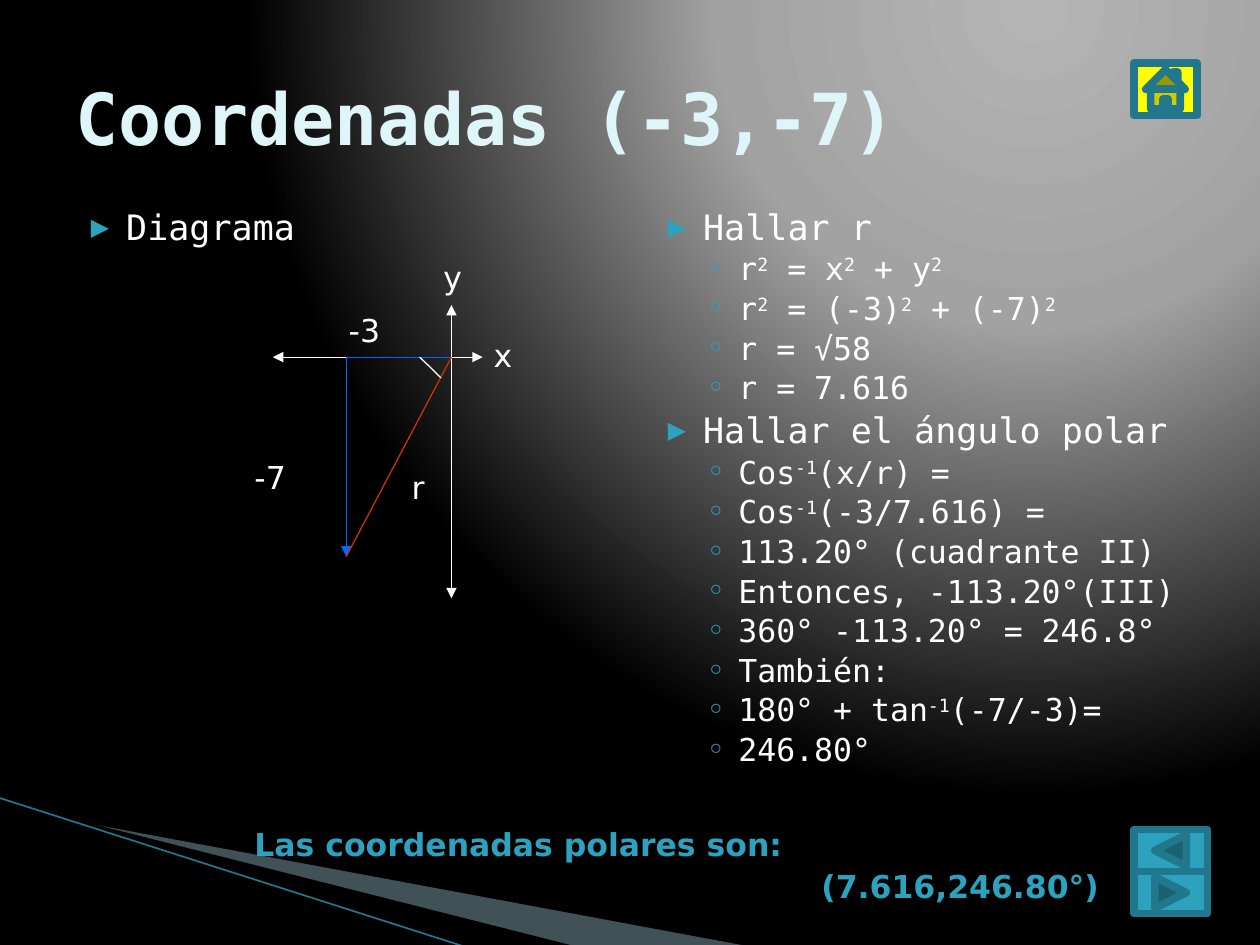
from lxml import etree
from pptx import Presentation
from pptx import oxml, util as u
from pptx.dml import color
from pptx.enum import shapes, text
from pptx.oxml import ns

MONO, SANS = "DejaVu Sans Mono", "DejaVu Sans"
WHITE, TEAL, DARK_TEAL, BLUE, RED = "FFFFFF", "2DA2BF", "21788D", "0066FF", "CC3300"
BULLETS = [  # per level: character, size %, left margin, hanging indent, points
    ("▶", 68, 1.02, 0.71, 20, 4),
    ("◦", 100, 1.73, 0.64, 18, 3.2),
]
HOME = shapes.MSO_SHAPE.ACTION_BUTTON_HOME
BACK = shapes.MSO_SHAPE.ACTION_BUTTON_BACK_OR_PREVIOUS
FORWARD = shapes.MSO_SHAPE.ACTION_BUTTON_FORWARD_OR_NEXT


def rgb(value):
    return color.RGBColor.from_string(value)


def child(parent, tag, **attributes):
    return etree.SubElement(parent, ns.qn(tag), attributes)


class Board:
    """Style and current slide; all lengths are in centimetres."""

    def __init__(self, slide):
        self.slide = slide
        self.shapes = slide.shapes

    def background(self, stops, focus):
        """Radial gradient; focus holds the l, t, r, b insets in percent."""
        bg = oxml.parse_xml(f"<p:bg {ns.nsdecls('p', 'a')}><p:bgPr/></p:bg>")
        gradient = child(bg[0], "a:gradFill", rotWithShape="1")
        stop_list = child(gradient, "a:gsLst")
        for position, value in stops:
            stop = child(stop_list, "a:gs", pos=str(position * 1000))
            child(stop, "a:srgbClr", val=value)
        circle = child(gradient, "a:path", path="circle")
        insets = {side: str(inset * 1000) for side, inset in zip("ltrb", focus)}
        child(circle, "a:fillToRect", **insets)
        child(bg[0], "a:effectLst")
        self.slide._element.cSld.insert(0, bg)

    def outline(self, points, fill=None, alpha=None, line=None):
        corners = [(u.Cm(x), u.Cm(y)) for x, y in points]
        builder = self.shapes.build_freeform(*corners[0])
        builder.add_line_segments(corners[1:], close=fill is not None)
        figure = builder.convert_to_shape()
        figure.shadow.inherit = False
        if fill:
            figure.fill.solid()
            figure.fill.fore_color.rgb = rgb(fill)
        else:
            figure.fill.background()
        if alpha:
            tint = figure._element.spPr.find(".//" + ns.qn("a:srgbClr"))
            child(tint, "a:alpha", val=str(alpha * 1000))
        if line:
            figure.line.color.rgb = rgb(line)
            figure.line.width = u.Pt(0.75)
        else:
            figure.line.fill.background()

    def line(self, start, end, value=WHITE, width=0.75, arrow=False):
        ends = [u.Cm(n) for n in (*start, *end)]
        stroke = self.shapes.add_connector(shapes.MSO_CONNECTOR.STRAIGHT, *ends)
        stroke.line.color.rgb = rgb(value)
        stroke.line.width = u.Pt(width)
        if arrow:
            child(stroke.line._get_or_add_ln(), "a:tailEnd", type="triangle")
        child(stroke._element.spPr, "a:effectLst")

    def font(self, paragraph, name, size, value, bold=False):
        font = paragraph.font
        font.name, font.size, font.bold = name, u.Pt(size), bold
        font.color.rgb = rgb(value)

    def placeholder(self, idx, left, top, width, height):
        """Place a template placeholder in front of what is already drawn."""
        holder = self.slide.placeholders[idx]
        holder.left, holder.top = u.Cm(left), u.Cm(top)
        holder.width, holder.height = u.Cm(width), u.Cm(height)
        holder.text_frame.auto_size = text.MSO_AUTO_SIZE.NONE
        self.shapes._spTree.append(holder._element)
        return holder.text_frame

    def title(self, wording):
        frame = self.placeholder(0, 1.27, 0.76, 22.86, 3.18)
        frame.vertical_anchor = text.MSO_ANCHOR.MIDDLE
        heading = frame.paragraphs[0]
        heading.text = wording
        heading.alignment = text.PP_ALIGN.LEFT
        self.font(heading, MONO, 41, "DEF5FA", bold=True)

    def bullets(self, idx, left, items):
        """Items are (level, wording); ^ opens and closes a superscript."""
        frame = self.placeholder(idx, left, 4.11, 11.23, 12.57)
        for number, (level, wording) in enumerate(items):
            item = frame.add_paragraph() if number else frame.paragraphs[0]
            mark, percent, margin, hanging, size, before = BULLETS[level]
            item.level = level
            props = item._element.get_or_add_pPr()
            props.set("marL", str(u.Cm(margin)))
            props.set("indent", str(-u.Cm(hanging)))
            child(child(props, "a:buClr"), "a:srgbClr", val=TEAL)
            child(props, "a:buSzPct", val=str(percent * 1000))
            child(props, "a:buFont", typeface=SANS)
            child(props, "a:buChar", char=mark)
            item.line_spacing = 0.9
            item.space_before = u.Pt(before if number else 0)
            self.font(item, MONO, size, WHITE)
            for part, piece in enumerate(wording.split("^")):
                run = item.add_run()
                run.text = piece
                if part % 2:
                    run.font._element.set("baseline", "30000")

    def label(self, wording, left, top, width, value=WHITE, bold=False):
        box = self.shapes.add_textbox(u.Cm(left), u.Cm(top), u.Cm(width), u.Cm(1.02))
        box.text_frame.word_wrap = True
        caption = box.text_frame.paragraphs[0]
        caption.text = wording
        self.font(caption, SANS, 18, value, bold)

    def button(self, kind, left, top, width, height, fill=TEAL):
        key = self.shapes.add_shape(kind, *map(u.Cm, (left, top, width, height)))
        key.shadow.inherit = False
        key.fill.solid()
        key.fill.fore_color.rgb = rgb(fill)
        key.line.color.rgb = rgb(DARK_TEAL)
        key.line.width = u.Pt(4.33)


def main():
    deck = Presentation()
    deck.slide_width, deck.slide_height = u.Cm(25.4), u.Cm(19.05)
    board = Board(deck.slides.add_slide(deck.slide_layouts[3]))

    board.background([(0, "B4B4B4"), (40, "A2A2A2"), (100, "000000")], (65, 0, 0, 98))
    board.outline([(1.4, 16.53), (15.11, 19.08), (11.58, 19.08), (1.4, 16.51)],
                  fill="A0CBDC", alpha=40)
    board.outline([(1.35, 16.48), (11.61, 19.08), (9.45, 19.1), (1.37, 16.51)],
                  fill="000000")
    board.line((-0.03, 16.08), (9.42, 19.1), DARK_TEAL, 0.95)

    board.bullets(1, 1.27, [(0, "Diagrama")])
    board.bullets(2, 12.9, [
        (0, "Hallar r"),
        (1, "r^2^ = x^2^ + y^2^"),
        (1, "r^2^ = (-3)^2^ + (-7)^2^"),
        (1, "r = √58"),
        (1, "r = 7.616"),
        (0, "Hallar el ángulo polar"),
        (1, "Cos^-1^(x/r) ="),
        (1, "Cos^-1^(-3/7.616) ="),
        (1, "113.20° (cuadrante II)"),
        (1, "Entonces, -113.20°(III)"),
        (1, "360° -113.20° = 246.8°"),
        (1, "También:"),
        (1, "180° + tan^-1^(-7/-3)="),
        (1, "246.80°"),
    ])
    board.title("Coordenadas (-3,-7)")

    origin, foot, point = (9.1, 7.2), (6.98, 7.2), (6.98, 11.22)
    for start, end in [
        ((9.1, 6.35), (9.1, 12.06)),
        ((9.1, 8.05), (9.1, 6.15)),
        (origin, (5.5, 7.2)),
        ((8.89, 7.2), (9.73, 7.2)),
    ]:
        board.line(start, end, arrow=True)
    board.line(foot, point, BLUE, arrow=True)
    board.line(origin, foot, BLUE)
    board.line(origin, point, RED)

    for wording, left, top, width in [
        ("-3", 6.78, 6.15, 1.47),
        ("-7", 4.88, 9.1, 1.7),
        ("r", 8.05, 9.32, 0.64),
        ("y", 8.69, 5.08, 1.7),
        ("x", 9.7, 6.65, 0.89),
    ]:
        board.label(wording, left, top, width)
    board.label("(7.616,246.80°)", 16.31, 17.35, 6.6, TEAL, bold=True)
    board.label("Las coordenadas polares son:", 4.88, 16.51, 12.07, TEAL, bold=True)
    board.outline([(8.46, 7.2), (8.68, 7.41), (8.89, 7.62)], line=WHITE)

    board.button(FORWARD, 22.86, 17.57, 1.48, 0.85)
    board.button(BACK, 22.86, 16.72, 1.48, 0.85)
    board.button(HOME, 22.86, 1.27, 1.27, 1.06, "FFFF00")
    deck.save("out.pptx")


if __name__ == "__main__":
    main()
